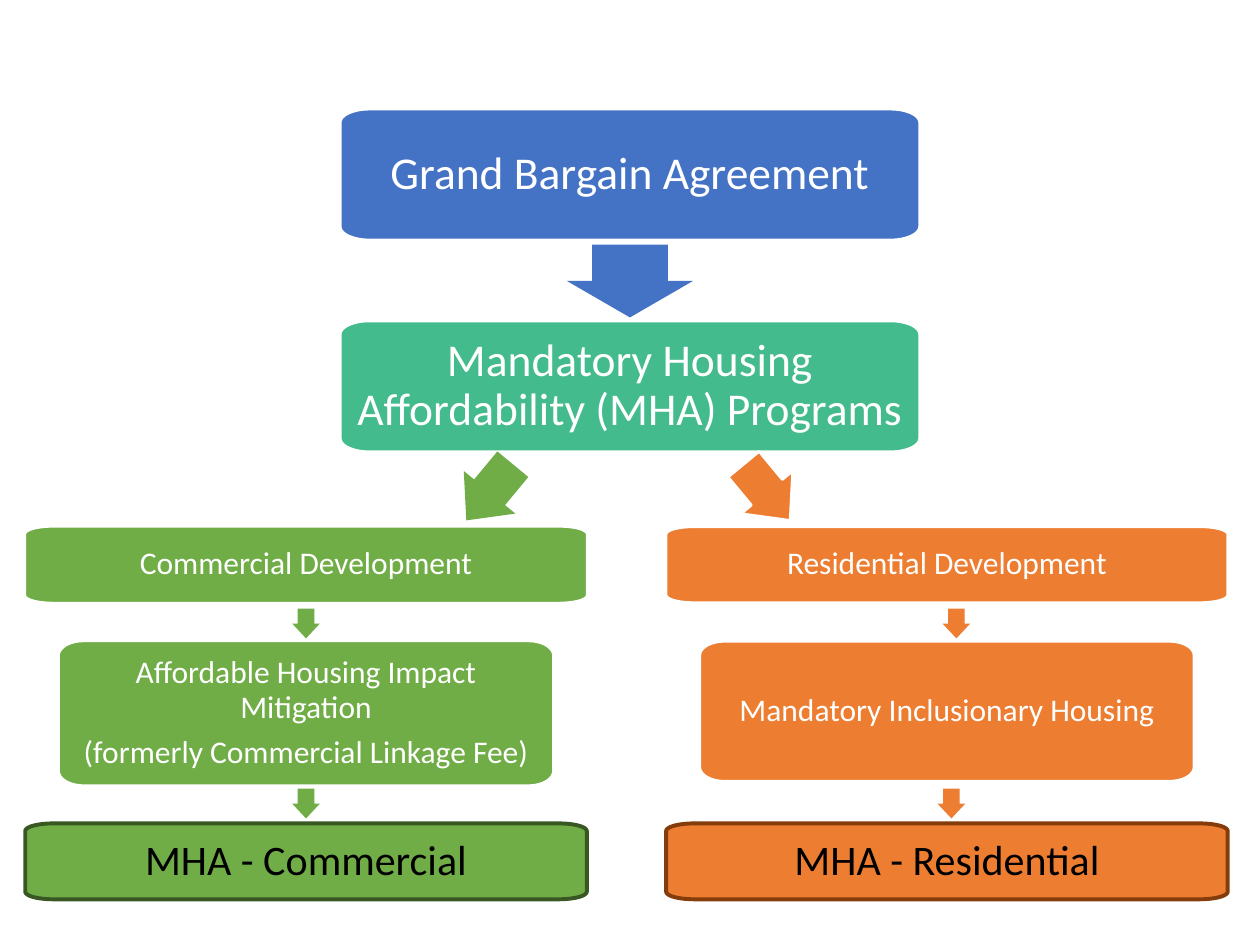
import math

import pptx
import pptx.dml.color
import pptx.enum.shapes
import pptx.enum.text
import pptx.util

Cm = pptx.util.Cm
Pt = pptx.util.Pt
RGBColor = pptx.dml.color.RGBColor

WHITE = RGBColor(0xFF, 0xFF, 0xFF)
BLACK = RGBColor(0x00, 0x00, 0x00)
BLUE = RGBColor(0x44, 0x72, 0xC4)
TEAL = RGBColor(0x43, 0xBB, 0x8D)
GREEN = RGBColor(0x70, 0xAD, 0x47)
DARK_GREEN = RGBColor(0x38, 0x57, 0x23)
ORANGE = RGBColor(0xED, 0x7D, 0x31)
DARK_ORANGE = RGBColor(0x84, 0x3C, 0x0B)


class FlowChart:
    font = "Calibri"
    inset = Cm(0.28)
    corner_steps = 12

    def __init__(self, slide):
        self.s = slide

    def paint(self, sp, fill, line=None, weight=1):
        sp.shadow.inherit = False
        sp.fill.solid()
        sp.fill.fore_color.rgb = fill
        if line is None:
            sp.line.fill.background()
        else:
            sp.line.color.rgb = line
            sp.line.width = Pt(weight)

    def outline(self, center, top, width, height):
        rx, ry = 0.05 * width, 0.1 * height
        middle = top + height / 2
        points = []
        for quarter, (sx, sy) in enumerate([(1, 1), (-1, 1), (-1, -1), (1, -1)]):
            cx = center + sx * (width / 2 - rx)
            cy = middle + sy * (height / 2 - ry)
            for step in range(self.corner_steps + 1):
                angle = math.pi / 2 * (quarter + step / self.corner_steps)
                points.append((Cm(cx + rx * math.cos(angle)),
                               Cm(cy + ry * math.sin(angle))))
        return points

    def box(self, text, center, top, width, height, fill, size,
            color=WHITE, line=WHITE, weight=1):
        points = self.outline(center, top, width, height)
        builder = self.s.shapes.build_freeform(*points[0])
        builder.add_line_segments(points[1:], close=True)
        sp = builder.convert_to_shape()
        self.paint(sp, fill, line, weight)
        tf = sp.text_frame
        tf.word_wrap = True
        tf.vertical_anchor = pptx.enum.text.MSO_ANCHOR.MIDDLE
        tf.margin_left = tf.margin_right = self.inset
        tf.margin_top = tf.margin_bottom = self.inset
        tf.text = text
        for p in tf.paragraphs:
            p.alignment = pptx.enum.text.PP_ALIGN.CENTER
            p.line_spacing = 0.9
            p.space_after = Pt(0.35 * size)
            for r in p.runs:
                r.font.name = self.font
                r.font.size = Pt(size)
                r.font.color.rgb = color

    def arrow(self, center, top, width, height, fill, rotation=0,
              line=None, weight=1):
        sp = self.s.shapes.add_shape(
            pptx.enum.shapes.MSO_SHAPE.DOWN_ARROW,
            Cm(center - width / 2), Cm(top), Cm(width), Cm(height))
        sp.adjustments[0] = 0.6
        sp.adjustments[1] = 0.5 * height / min(width, height)
        sp.rotation = rotation
        self.paint(sp, fill, line, weight)


def main():
    prs = pptx.Presentation()
    prs.slide_width = Cm(25.4)
    prs.slide_height = Cm(19.05)
    chart = FlowChart(prs.slides.add_slide(prs.slide_layouts[6]))

    middle = 12.7
    chart.box("Grand Bargain Agreement", middle, 2.21, 11.66, 2.62, BLUE, 26)
    chart.arrow(middle, 4.93, 2.54, 1.47, BLUE)
    chart.box("Mandatory Housing Affordability (MHA) Programs",
              middle, 6.48, 11.66, 2.62, TEAL, 26)
    chart.arrow(9.87, 9.19, 1.35, 1.47, GREEN, 39.6)
    chart.arrow(15.46, 9.19, 1.35, 1.47, ORANGE, -39.6, WHITE, 1.5)

    branches = [
        (6.17, "Commercial",
         "Affordable Housing Impact Mitigation\n(formerly Commercial Linkage Fee)",
         2.9, GREEN, DARK_GREEN, 1, (6.17, 6.17)),
        (19.09, "Residential", "Mandatory Inclusionary Housing",
         2.82, ORANGE, DARK_ORANGE, 1.5, (19.28, 19.18)),
    ]
    for center, sector, program, height, fill, border, weight, arrows in branches:
        chart.box(f"{sector} Development", center, 10.62, 11.32, 1.53,
                  fill, 18, weight=weight)
        chart.box(program, center, 12.93, 9.96, height, fill, 18, weight=weight)
        chart.box(f"MHA - {sector}", center, 16.6, 11.32, 1.53,
                  fill, 24, BLACK, border, 2.25)
        for arrow_center, top in zip(arrows, (12.27, 15.9)):
            chart.arrow(arrow_center, top, 0.56, 0.6, fill)

    prs.save("out.pptx")


if __name__ == "__main__":
    main()
